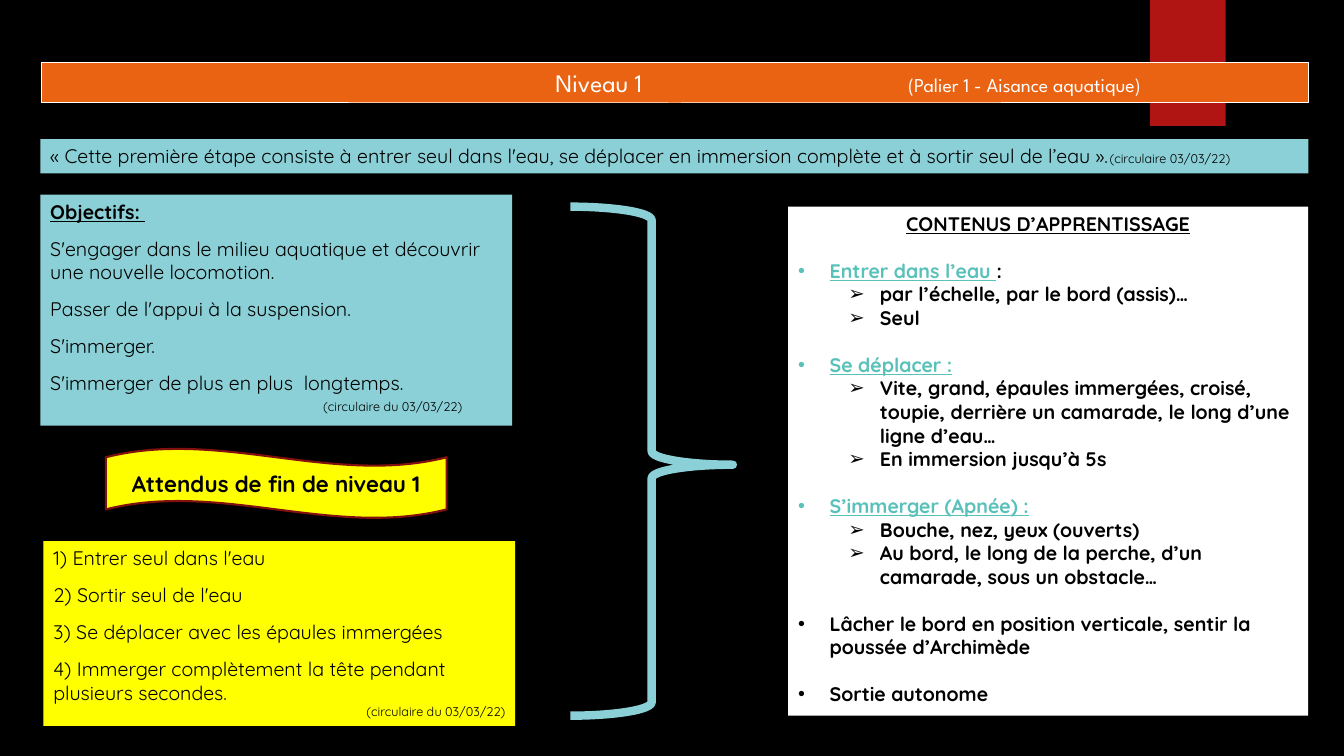
from lxml.etree import SubElement
from pptx import Presentation
from pptx.dml.color import RGBColor
from pptx.enum.shapes import MSO_SHAPE as Preset
from pptx.enum.text import MSO_ANCHOR as Anchor, MSO_AUTO_SIZE as AutoSize, PP_ALIGN as Align
from pptx.oxml.ns import qn
from pptx.util import Pt

BLACK, WHITE, YELLOW = "000000", "FFFFFF", "FFFF00"
AQUA, TEAL, ORANGE, RED, MAROON = "8AD0D6", "58C1BA", "EA6312", "B01513", "82100E"
BODY_FONT, TITLE_FONT = "Quicksand", "League Spartan"
STEP_GAP, TOPIC_GAP = 9.6, 16.8

OBJECTIVES = [
    "S'engager dans le milieu aquatique et découvrir une nouvelle locomotion.",
    "Passer de l'appui à la suspension.",
    "S'immerger.",
    "S'immerger de plus en plus  longtemps.",
]
EXPECTATIONS = [
    "1) Entrer seul dans l'eau",
    "2) Sortir seul de l'eau",
    "3) Se déplacer avec les épaules immergées",
    "4) Immerger complètement la tête pendant plusieurs secondes.",
]
# Topic, unlinked ending, colour, details
TOPICS = [
    ("Entrer dans l’eau ", ":", TEAL, ["par l’échelle, par le bord (assis)…", "Seul"]),
    ("Se déplacer :", "", TEAL, [
        "Vite, grand, épaules immergées, croisé, toupie, derrière un camarade, "
        "le long d’une ligne d’eau…",
        "En immersion jusqu’à 5s"]),
    ("S’immerger (Apnée) :", "", TEAL, [
        "Bouche, nez, yeux (ouverts)",
        "Au bord, le long de la perche, d’un camarade, sous un obstacle…"]),
    ("Lâcher le bord en position verticale, sentir la poussée d’Archimède", "", BLACK, []),
    ("Sortie autonome", "", BLACK, []),
]


def rgb(hex_code):
    return RGBColor.from_string(hex_code)


def add_panel(slide, box, fill=None, line=None, line_width=1, preset=Preset.RECTANGLE):
    panel = slide.shapes.add_shape(preset, *map(Pt, box))
    panel.shadow.inherit = False
    if fill:
        panel.fill.solid()
        panel.fill.fore_color.rgb = rgb(fill)
    else:
        panel.fill.background()
    if line:
        panel.line.color.rgb = rgb(line)
        panel.line.width = Pt(line_width)
    else:
        panel.line.fill.background()
    panel.text_frame.word_wrap = True
    panel.text_frame.vertical_anchor = Anchor.TOP
    return panel


def style(paragraph, size=14, bold=False, color=BLACK, font=BODY_FONT):
    paragraph.font.name = font
    paragraph.font.size = Pt(size)
    paragraph.font.bold = bold
    paragraph.font.color.rgb = rgb(color)


def add_text(frame, text, gap=0, align=Align.LEFT, bullet=None, indent=0,
             bullet_color=BLACK, **font):
    """Fill the frame's first paragraph if it is still empty, else append one."""
    first = frame.paragraphs[0]
    paragraph = frame.add_paragraph() if first.runs else first
    paragraph.add_run().text = text
    paragraph.alignment = align
    paragraph.space_before = Pt(gap)
    properties = paragraph._p.get_or_add_pPr()
    properties.set("marL", str(Pt(indent)))
    if bullet:
        properties.set("indent", str(Pt(-22.5)))
        SubElement(SubElement(properties, qn("a:buClr")), qn("a:srgbClr"), val=bullet_color)
        SubElement(properties, qn("a:buFont"), typeface="Arial")
        SubElement(properties, qn("a:buChar"), char=bullet)
    style(paragraph, **font)
    return paragraph


def add_title_bar(slide, box):
    title = slide.shapes.title
    title.left, title.top, title.width, title.height = map(Pt, box)
    title.fill.solid()
    title.fill.fore_color.rgb = rgb(ORANGE)
    title.line.color.rgb = rgb(WHITE)
    title.line.width = Pt(0.75)
    frame = title.text_frame
    frame.auto_size = AutoSize.NONE
    frame.vertical_anchor = Anchor.TOP
    paragraph = frame.paragraphs[0]
    paragraph.alignment = Align.LEFT
    tabs = SubElement(paragraph._p.get_or_add_pPr(), qn("a:tabLst"))
    for position in (360, 612):
        SubElement(tabs, qn("a:tab"), pos=str(Pt(position)), algn="l")
    style(paragraph, 18, color=WHITE, font=TITLE_FONT)
    paragraph.add_run().text = "\tNiveau 1\t"
    stage = paragraph.add_run()
    stage.text = "(Palier 1 - Aisance aquatique)"
    stage.font.size = Pt(14)


def add_ribbon(slide, box):
    ribbon = add_panel(slide, box, RED)
    slide.shapes.title.element.addprevious(ribbon.element)


def add_quote(slide, box):
    frame = add_panel(slide, box, AQUA).text_frame
    quote = add_text(frame, "« Cette première étape consiste à entrer seul dans l'eau, se déplacer "
                            "en immersion complète et à sortir seul de l’eau ».")
    reference = quote.add_run()
    reference.text = "(circulaire 03/03/22)"
    reference.font.size = Pt(9)


def add_objectives(slide, box):
    frame = add_panel(slide, box, AQUA).text_frame
    heading = add_text(frame, "Objectifs: ", bold=True)
    heading.runs[0].font.underline = True
    for objective in OBJECTIVES:
        add_text(frame, objective, STEP_GAP)
    add_text(frame, "(circulaire du 03/03/22)", gap=3, indent=195, size=9)


def add_expectations_banner(slide, box):
    frame = add_panel(slide, box, YELLOW, MAROON, 1.5, Preset.WAVE).text_frame
    frame.vertical_anchor = Anchor.MIDDLE
    add_text(frame, "Attendus de fin de niveau 1", align=Align.CENTER, size=16, bold=True)


def add_expectations(slide, box):
    frame = add_panel(slide, box, YELLOW).text_frame
    for number, expectation in enumerate(EXPECTATIONS):
        add_text(frame, expectation, STEP_GAP if number else 0)
    add_text(frame, "(circulaire du 03/03/22)", align=Align.RIGHT, size=9)


def add_learning_contents(slide, box):
    frame = add_panel(slide, box, WHITE).text_frame
    heading = add_text(frame, "CONTENUS D’APPRENTISSAGE", align=Align.CENTER, bold=True)
    heading.runs[0].font.underline = True
    for topic, ending, color, details in TOPICS:
        paragraph = add_text(frame, topic, TOPIC_GAP, bullet="•", indent=22.5,
                             bullet_color=color, bold=True)
        if color == TEAL:
            paragraph.runs[0].font.underline = True
            paragraph.runs[0].font.color.rgb = rgb(TEAL)
        if ending:
            paragraph.add_run().text = ending
        for detail in details:
            add_text(frame, detail, bullet="➢", indent=58.5, bold=True)


def add_brace(slide, box):
    brace = add_panel(slide, box, line=AQUA, line_width=6, preset=Preset.RIGHT_BRACE)
    brace.adjustments[0] = 0.083
    brace.adjustments[1] = 0.507


def main():
    deck = Presentation()
    deck.slide_width, deck.slide_height = Pt(960), Pt(540)
    slide = deck.slides.add_slide(deck.slide_layouts[5])
    slide.background.fill.solid()
    slide.background.fill.fore_color.rgb = rgb(BLACK)

    add_title_bar(slide, (29.5, 44.6, 905, 29))
    add_ribbon(slide, (821.5, 0, 54, 90))
    add_expectations_banner(slide, (75.6, 320.4, 243.4, 49.7))
    add_objectives(slide, (28.8, 139, 337, 165))
    add_expectations(slide, (31, 386.6, 337, 132))
    add_quote(slide, (28.8, 99.4, 905.8, 24.5))
    add_learning_contents(slide, (563, 147.6, 371.5, 363.6))
    add_brace(slide, (407.5, 147.6, 116, 363.6))
    deck.save("out.pptx")


if __name__ == "__main__":
    main()
